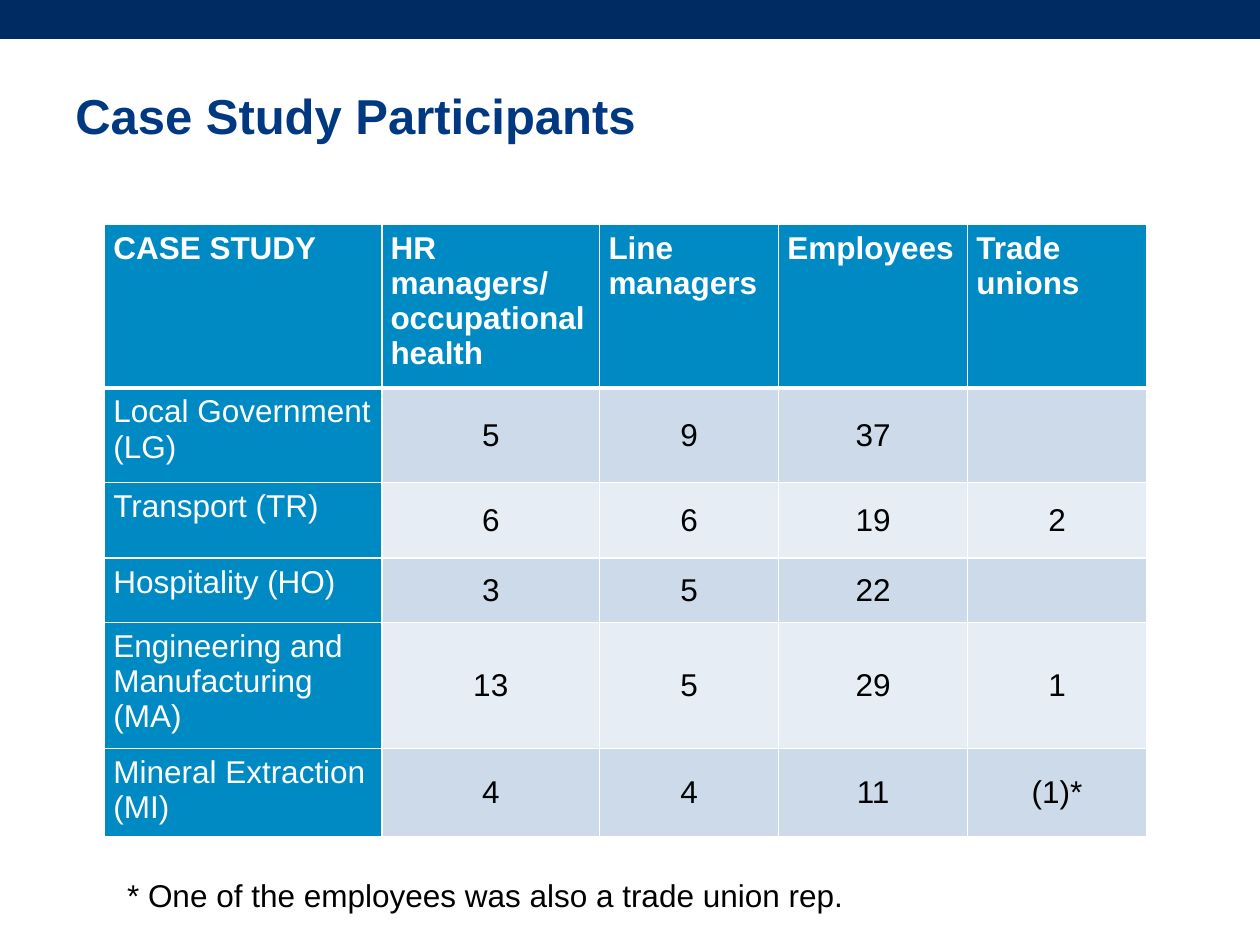
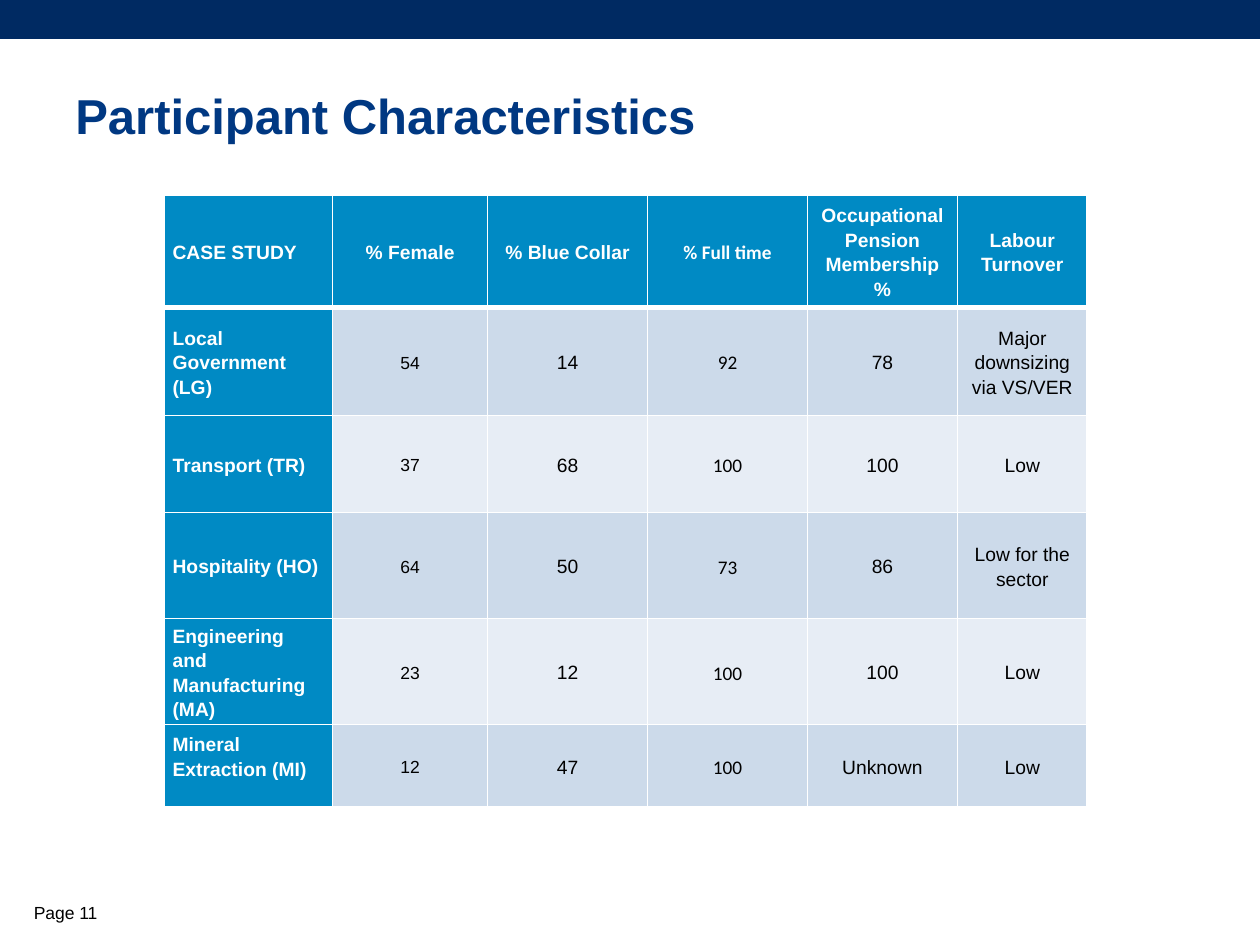
from dataclasses import dataclass

from lxml.etree import SubElement
from pptx import Presentation
from pptx.dml.color import RGBColor
from pptx.enum.shapes import MSO_SHAPE
from pptx.enum.text import MSO_ANCHOR, PP_ALIGN
from pptx.oxml.ns import qn
from pptx.util import Inches, Pt


@dataclass(frozen=True)
class Theme:
    band: RGBColor = RGBColor(0x00, 0x2A, 0x62)
    title: RGBColor = RGBColor(0x00, 0x38, 0x82)
    heading: RGBColor = RGBColor(0x00, 0x8A, 0xC4)
    stripes: tuple = (RGBColor(0xCC, 0xDA, 0xEA), RGBColor(0xE7, 0xED, 0xF5))
    white: RGBColor = RGBColor(0xFF, 0xFF, 0xFF)
    black: RGBColor = RGBColor(0x00, 0x00, 0x00)
    font: str = "Arial"
    alternate_font: str = "Calibri"
    title_size: int = 28
    large_size: int = 18
    table_size: int = 11
    small_size: int = 10


theme = Theme()


def add_text(slide, text, left, top, width, height, size, color, bold=False, anchor=MSO_ANCHOR.TOP):
    shape = slide.shapes.add_textbox(Inches(left), Inches(top), Inches(width), Inches(height))
    shape.text_frame.word_wrap = True
    shape.text_frame.vertical_anchor = anchor
    shape.text_frame.text = text
    font = shape.text_frame.paragraphs[0].font
    font.name, font.size, font.bold = theme.font, Pt(size), bold
    font.color.rgb = color


def add_borders(cell, top, bottom):
    properties = cell._tc.get_or_add_tcPr()
    for side, points in (("L", 1), ("R", 1), ("T", top), ("B", bottom)):
        line = SubElement(properties, qn(f"a:ln{side}"), w=str(Pt(points)))
        fill = SubElement(line, qn("a:solidFill"))
        SubElement(fill, qn("a:srgbClr"), val=str(theme.white))


case_studies = [
    "Local Government (LG)",
    "Transport (TR)",
    "Hospitality (HO)",
    "Engineering and Manufacturing (MA)",
    "Mineral Extraction (MI)",
]

pages = [
    {
        "title": "Case Study Participants",
        "position": (0.83, 1.78),
        "columns": [2.2, 1.73, 1.42, 1.5, 1.42],
        "rows": [1.22, 0.75, 0.6, 0.51, 0.94, 0.68],
        "headings": ["CASE STUDY", "HR managers/\noccupational health", "Line managers",
                     "Employees", "Trade unions"],
        "values": [
            ["5", "9", "37", ""],
            ["6", "6", "19", "2"],
            ["3", "5", "22", ""],
            ["13", "5", "29", "1"],
            ["4", "4", "11", "(1)*"],
        ],
        "size": theme.large_size,
        "margin": 0.05,
        "spacing": 1.0,
        "compact": False,
    },
    {
        "title": "Participant Characteristics",
        "position": (1.3, 1.55),
        "columns": [1.34, 1.23, 1.27, 1.27, 1.19, 1.03],
        "rows": [0.89, 0.86, 0.77, 0.84, 0.78, 0.65],
        "headings": ["CASE STUDY", "% Female", "% Blue Collar", "% Full time",
                     "Occupational Pension Membership %", "Labour Turnover"],
        "values": [
            ["54", "14", "92", "78", "Major downsizing via VS/VER"],
            ["37", "68", "100", "100", "Low"],
            ["64", "50", "73", "86", "Low for the sector"],
            ["23", "12", "100", "100", "Low"],
            ["12", "47", "100", "Unknown", "Low"],
        ],
        "size": theme.table_size,
        "margin": 0,
        "spacing": 1.15,
        "compact": True,
    },
]

presentation = Presentation()
presentation.slide_width = Inches(10)
presentation.slide_height = Inches(7.5)

for page in pages:
    slide = presentation.slides.add_slide(presentation.slide_layouts[6])
    band = slide.shapes.add_shape(MSO_SHAPE.RECTANGLE, 0, 0, presentation.slide_width, Inches(0.31))
    band.shadow.inherit = False
    band.fill.solid()
    band.fill.fore_color.rgb = theme.band
    band.line.fill.background()
    add_text(slide, page["title"], 0.5, 0.6, 9.07, 0.63, theme.title_size, theme.title,
             bold=True, anchor=MSO_ANCHOR.MIDDLE)

    columns, rows, compact = page["columns"], page["rows"], page["compact"]
    left, top = page["position"]
    table = slide.shapes.add_table(len(rows), len(columns), Inches(left), Inches(top),
                                   Inches(sum(columns)), Inches(sum(rows))).table
    table.horz_banding = False
    for column, width in zip(table.columns, columns):
        column.width = Inches(width)
    for row, height in zip(table.rows, rows):
        row.height = Inches(height)

    body = [[name, *values] for name, values in zip(case_studies, page["values"])]
    for row_index, texts in enumerate([page["headings"], *body]):
        for column_index, text in enumerate(texts):
            is_header = row_index == 0
            is_label = column_index == 0
            is_heading = is_header or is_label
            cell = table.cell(row_index, column_index)
            add_borders(cell, top=3 if row_index == 1 else 1, bottom=3 if is_header else 1)
            cell.fill.solid()
            cell.fill.fore_color.rgb = theme.heading if is_heading else theme.stripes[(row_index - 1) % 2]
            cell.margin_left = cell.margin_right = Inches(0.07)
            cell.margin_top = cell.margin_bottom = Inches(page["margin"])
            centred = not is_label if compact else not is_heading
            cell.vertical_anchor = MSO_ANCHOR.MIDDLE if compact or centred else MSO_ANCHOR.TOP
            cell.text = text
            for paragraph in cell.text_frame.paragraphs:
                paragraph.alignment = PP_ALIGN.CENTER if centred else PP_ALIGN.LEFT
                paragraph.line_spacing = page["spacing"]
                font = paragraph.font
                font.name = theme.alternate_font if compact and column_index == 3 else theme.font
                is_small = compact and column_index == 1 and not is_header
                font.size = Pt(theme.small_size if is_small else page["size"])
                font.bold = is_header or (is_label and compact)
                font.color.rgb = theme.white if is_heading else theme.black
    if compact:
        table.cell(len(rows) - 1, 0).margin_bottom = Inches(0.16)

participants, characteristics = presentation.slides
add_text(participants, "* One of the employees was also a trade union rep.",
         0.91, 6.9, 6.69, 0.4, theme.large_size, theme.black)
add_text(characteristics, "Page 11", 0.17, 7.1, 0.74, 0.29, theme.small_size, theme.black,
         anchor=MSO_ANCHOR.MIDDLE)

presentation.save("out.pptx")
